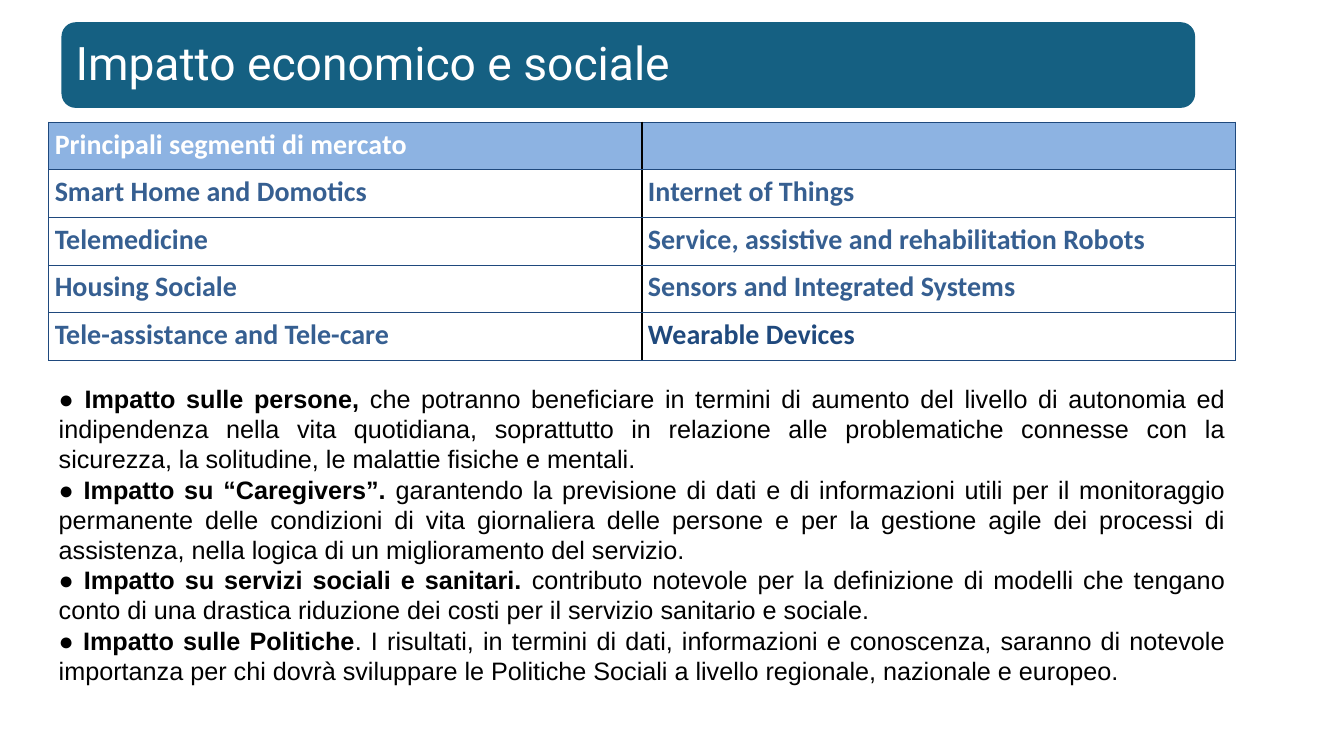
from lxml import etree
from pptx import Presentation
from pptx.dml.color import RGBColor
from pptx.enum import shapes, text
from pptx.oxml.ns import qn
from pptx.util import Cm, Pt

NAVY, STEEL, SKY, TEAL = "1F497D", "365F91", "8DB3E2", "156082"
WHITE, BLACK = "FFFFFF", "000000"

SEGMENTS = [
    ("Principali segmenti di mercato", ""),
    ("Smart Home and Domotics", "Internet of Things"),
    ("Telemedicine", "Service, assistive and rehabilitation Robots"),
    ("Housing Sociale", "Sensors and Integrated Systems"),
    ("Tele-assistance and Tele-care", "Wearable Devices"),
]

IMPACTS = [
    ("Impatto sulle persone,",
     " che potranno beneficiare in termini di aumento del livello di autonomia ed "
     "indipendenza nella vita quotidiana, soprattutto in relazione alle problematiche "
     "connesse con la sicurezza, la solitudine, le malattie fisiche e mentali."),
    ("Impatto su “Caregivers”.",
     " garantendo la previsione di dati e di informazioni utili per il monitoraggio "
     "permanente delle condizioni di vita giornaliera delle persone e per la gestione "
     "agile dei processi di assistenza, nella logica di un miglioramento del servizio."),
    ("Impatto su servizi sociali e sanitari.",
     " contributo notevole per la definizione di modelli che tengano conto di una "
     "drastica riduzione dei costi per il servizio sanitario e sociale."),
    ("Impatto sulle Politiche",
     ". I risultati, in termini di dati, informazioni e conoscenza, saranno di notevole "
     "importanza per chi dovrà sviluppare le Politiche Sociali a livello regionale, "
     "nazionale e europeo."),
]


def rgb(color):
    return RGBColor.from_string(color)


def style(font, name, size, color, bold=False):
    font.name, font.size, font.bold = name, Pt(size), bold
    font.color.rgb = rgb(color)


def add_title(slide, left, top, width, height):
    banner = slide.shapes.add_shape(
        shapes.MSO_SHAPE.ROUNDED_RECTANGLE, left, top, width, height)
    banner.shadow.inherit = False
    banner.fill.solid()
    banner.fill.fore_color.rgb = rgb(TEAL)
    banner.line.fill.background()
    frame = banner.text_frame
    frame.text = "Impatto economico e sociale"
    frame.vertical_anchor = text.MSO_ANCHOR.MIDDLE
    title = frame.paragraphs[0]
    title.alignment = text.PP_ALIGN.LEFT
    title.line_spacing = 0.9
    style(title.runs[0].font, "Roboto", 33, WHITE)


def set_borders(cell, **colors):
    """Draw 1 pt borders; the keywords L, R, T and B give the colours."""
    properties = cell._tc.get_or_add_tcPr()
    for side, color in colors.items():
        line = etree.SubElement(properties, qn(f"a:ln{side}"), w=str(Pt(1)))
        fill = etree.SubElement(line, qn("a:solidFill"))
        etree.SubElement(fill, qn("a:srgbClr"), val=color)


def add_segments(slide, left, top, width, height):
    table = slide.shapes.add_table(
        len(SEGMENTS), 2, left, top, width, height).table
    table.first_row = table.horz_banding = False
    for r, segments in enumerate(SEGMENTS):
        for c, segment in enumerate(segments):
            cell = table.cell(r, c)
            cell.margin_left = cell.margin_right = Cm(0.15)
            cell.margin_top = cell.margin_bottom = 0
            set_borders(cell, L=BLACK if c else NAVY, R=NAVY if c else BLACK,
                        T=NAVY, B=NAVY)
            if r == 0:
                cell.fill.solid()
                cell.fill.fore_color.rgb = rgb(SKY)
                color = WHITE
            else:
                cell.fill.background()
                color = NAVY if segment == "Wearable Devices" else STEEL
            cell.text_frame.text = segment
            label = cell.text_frame.paragraphs[0]
            label.line_spacing = 1.15
            style(label.font, "Calibri", 20, color, bold=True)
            for run in label.runs:
                style(run.font, "Calibri", 20, color, bold=True)


def add_impacts(slide, left, top, width, height):
    frame = slide.shapes.add_textbox(left, top, width, height).text_frame
    frame.word_wrap = True
    frame.auto_size = text.MSO_AUTO_SIZE.SHAPE_TO_FIT_TEXT
    for i, (heading, detail) in enumerate(IMPACTS):
        impact = frame.add_paragraph() if i else frame.paragraphs[0]
        impact.alignment = text.PP_ALIGN.JUSTIFY
        for part in ("● ", heading, detail):
            run = impact.add_run()
            run.text = part
            style(run.font, "Arial", 18, BLACK, bold=part == heading)


def main():
    deck = Presentation()
    deck.slide_width, deck.slide_height = Cm(33.87), Cm(19.05)
    slide = deck.slides.add_slide(deck.slide_layouts[6])
    left, width = Cm(1.23), Cm(29.9)
    add_title(slide, Cm(1.55), Cm(0.56), Cm(28.57), Cm(2.16))
    add_segments(slide, left, Cm(3.08), width, Cm(6))
    add_impacts(slide, left, Cm(9.53), width, Cm(7.95))
    deck.save("out.pptx")


if __name__ == "__main__":
    main()
